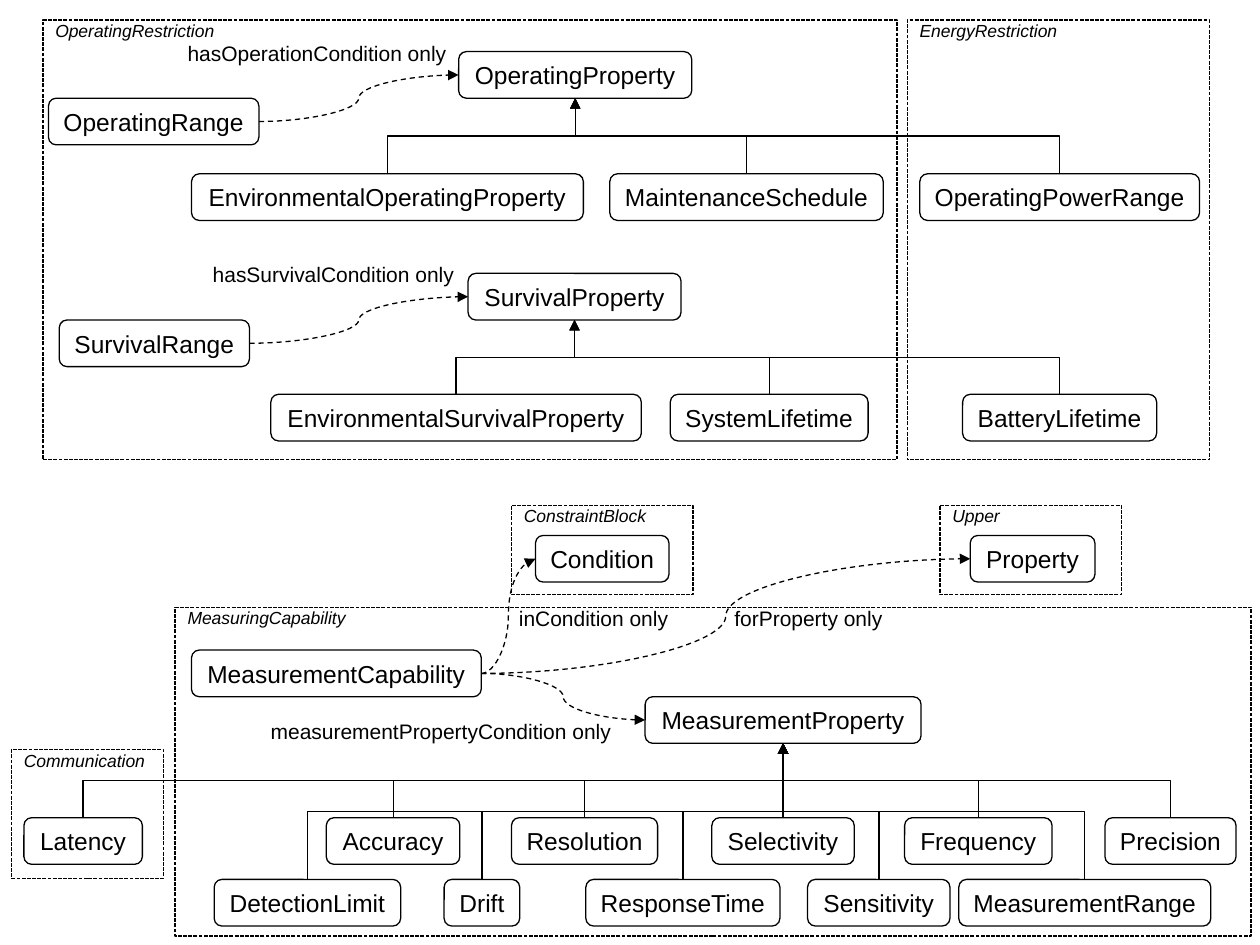
"""Builds a class diagram of operating, survival and measurement properties."""
import pptx
import pptx.util
import pptx.dml.color
import pptx.enum.dml
import pptx.enum.shapes
import pptx.enum.text
import pptx.oxml
import pptx.oxml.ns

BLACK = pptx.dml.color.RGBColor(0, 0, 0)
WIDE, HIGH = pptx.util.Inches(10), pptx.util.Inches(7.5)
CELL = WIDE / 100
TALL = 3.7
DASH = pptx.enum.dml.MSO_LINE
KIND = pptx.enum.shapes.MSO_SHAPE
LINK = pptx.enum.shapes.MSO_CONNECTOR
ALIGN = pptx.enum.text.PP_ALIGN
ANCHOR = pptx.enum.text.MSO_ANCHOR
FIT = pptx.enum.text.MSO_AUTO_SIZE

FRAMES = [
    ("Communication", 0.9, 59.5, 12.1, 10.2),
    ("ConstraintBlock", 40.6, 40.1, 14.4, 7.1),
    ("Upper", 74.6, 40.1, 14.4, 7.1),
    ("MeasuringCapability", 13.9, 48.2, 85.4, 26.1),
    ("EnergyRestriction", 72, 1.6, 24, 34.9),
    ("OperatingRestriction", 3.4, 1.6, 67.8, 34.9),
]
ROWS = {
    4.1: [("OperatingProperty", 36.4, 18.5)],
    7.8: [("OperatingRange", 3.85, 16.7)],
    13.8: [("EnvironmentalOperatingProperty", 15.2, 31.1),
           ("MaintenanceSchedule", 48.4, 21.7),
           ("OperatingPowerRange", 73, 22.2)],
    21.7: [("SurvivalProperty", 37.15, 16.9)],
    25.4: [("SurvivalRange", 4.7, 15.1)],
    31.3: [("EnvironmentalSurvivalProperty", 21.5, 29.4),
           ("SystemLifetime", 53.2, 15.7), ("BatteryLifetime", 76.4, 15.4)],
    42.5: [("Condition", 42.5, 10.6), ("Property", 77, 9.9)],
    51.6: [("MeasurementCapability", 15.2, 23)],
    55.3: [("MeasurementProperty", 51.2, 21.9)],
    64.9: [("Latency", 1.9, 9.4), ("Accuracy", 25.9, 10.6),
           ("Resolution", 40.6, 11.6), ("Selectivity", 56.5, 11.3),
           ("Frequency", 71.8, 11.7), ("Precision", 87.7, 10.4)],
    69.8: [("DetectionLimit", 17, 14.8), ("Drift", 35.25, 6),
           ("ResponseTime", 46.5, 15.4), ("Sensitivity", 64.1, 11.3),
           ("MeasurementRange", 76.1, 20)],
}
TREES = {"OperatingProperty": [13.8], "SurvivalProperty": [31.3],
         "MeasurementProperty": [64.9, 69.8]}
CURVES = [
    ("OperatingRange", "OperatingProperty"),
    ("SurvivalRange", "SurvivalProperty"),
    ("MeasurementCapability", "MeasurementProperty"),
    ("MeasurementCapability", "Property"),
    ("MeasurementCapability", "Condition"),
]
LABELS = [
    ("hasOperationCondition only", 13.9, 2.7, 22.8),
    ("hasSurvivalCondition only", 15.9, 20.3, 21.4),
    ("measurementPropertyCondition only", 20.5, 56.5, 29.3),
    ("forProperty only", 57.3, 47.6, 13.9),
    ("inCondition only", 40.2, 47.6, 14),
]


def span(*cells):
    """Turn grid cells into whole lengths."""
    return [pptx.util.Emu(round(cell * CELL)) for cell in cells]


def write(shape, text, size, align):
    """Put one styled paragraph in a shape."""
    para = shape.text_frame.paragraphs[0]
    para.text = text
    para.alignment = align
    para.font.name = "Arial"
    para.font.size = pptx.util.Pt(size)
    para.font.color.rgb = BLACK


def ink(line, dash=None):
    """Give a line its colour, width and dash."""
    line.color.rgb = BLACK
    line.width = pptx.util.Pt(0.75)
    if dash:
        line.dash_style = dash


def block(slide, kind, area, dash=None):
    """Add an outlined shape without fill or shadow."""
    shape = slide.shapes.add_shape(kind, *span(*area))
    shape.shadow.inherit = False
    shape.fill.background()
    ink(shape.line, dash)
    return shape


def frame(slide, text, *area):
    """Add a dashed module frame with its title at the top left."""
    shape = block(slide, KIND.RECTANGLE, area, DASH.SQUARE_DOT)
    body = shape.text_frame
    body.margin_top = 0
    body.vertical_anchor = ANCHOR.TOP
    write(shape, text, 10, ALIGN.LEFT)
    body.paragraphs[0].font.italic = True


def node(slide, text, left, top, width):
    """Add a rounded class box."""
    shape = block(slide, KIND.ROUNDED_RECTANGLE, (left, top, width, TALL))
    shape.text_frame.word_wrap = False
    shape.text_frame.auto_size = FIT.SHAPE_TO_FIT_TEXT
    shape.text_frame.vertical_anchor = ANCHOR.MIDDLE
    write(shape, text, 14, ALIGN.CENTER)
    return shape


def label(slide, text, left, top, width):
    """Add the name of a relation."""
    shape = slide.shapes.add_textbox(*span(left, top, width, 3))
    shape.text_frame.word_wrap = False
    shape.text_frame.auto_size = FIT.SHAPE_TO_FIT_TEXT
    write(shape, text, 12, ALIGN.LEFT)


def arrow(slide, kind, ends, dash=None):
    """Add a connector with a triangle at its end."""
    link = slide.shapes.add_connector(kind, *[round(end) for end in ends])
    ink(link.line, dash)
    tip = pptx.oxml.parse_xml(
        '<a:tailEnd %s type="triangle"/>' % pptx.oxml.ns.nsdecls("a"))
    link.line._get_or_add_ln().append(tip)
    link._element.spPr.append(pptx.oxml.parse_xml(
        "<a:effectLst %s/>" % pptx.oxml.ns.nsdecls("a")))
    return link


def curve(slide, start, goal):
    """Join the right side of one box to the left side of another."""
    link = arrow(slide, LINK.CURVE, (0, 0, 0, 0), DASH.DASH)
    link.begin_connect(start, 3)
    link.end_connect(goal, 1)


def branch(slide, child, root):
    """Run a bent arrow from the top of a child up to its root."""
    x, y = child.left + child.width / 2, child.top
    goal, base = root.left + root.width / 2, root.top + root.height
    midx, midy = (x + goal) / 2, (y + base) / 2
    side = 1 if x < goal else -1
    dx, dy = side * (x - midx), side * (y - midy)
    link = arrow(slide, LINK.ELBOW,
                 (midx + dy, midy - dx, midx - dy, midy + dx))
    turn = 90 if side > 0 else 270
    link._element.spPr.xfrm.set("rot", str(turn * 60000))


def main():
    """Build and save the slide."""
    deck = pptx.Presentation()
    deck.slide_width, deck.slide_height = WIDE, HIGH
    slide = deck.slides.add_slide(deck.slide_layouts[6])
    for item in FRAMES:
        frame(slide, *item)
    nodes = {name: node(slide, name, left, top, width)
             for top, row in ROWS.items() for name, left, width in row}
    for root, tops in TREES.items():
        for top in tops:
            for name, *_ in ROWS[top]:
                branch(slide, nodes[name], nodes[root])
    for start, goal in CURVES:
        curve(slide, nodes[start], nodes[goal])
    for item in LABELS:
        label(slide, *item)
    deck.save("out.pptx")


if __name__ == "__main__":
    main()
